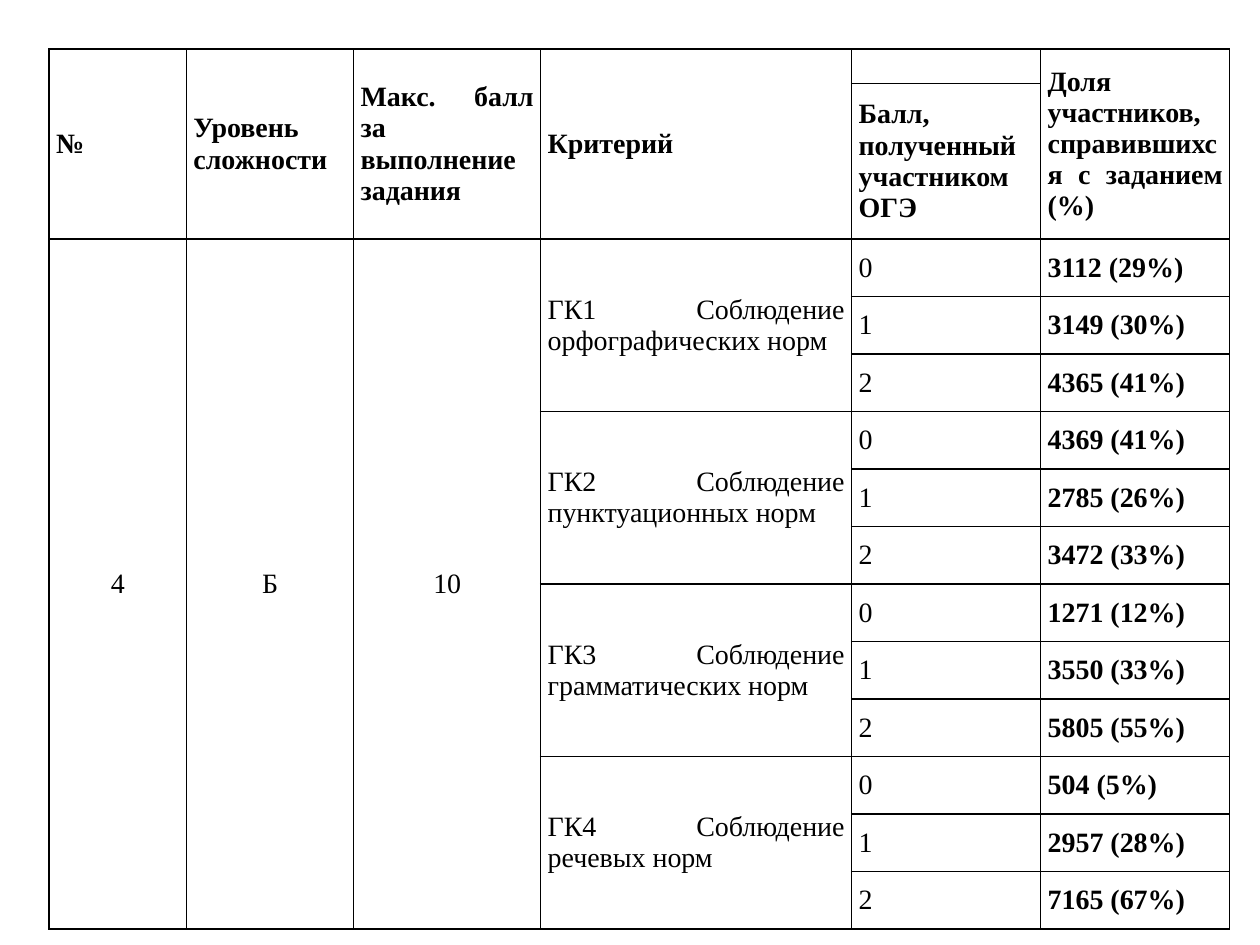
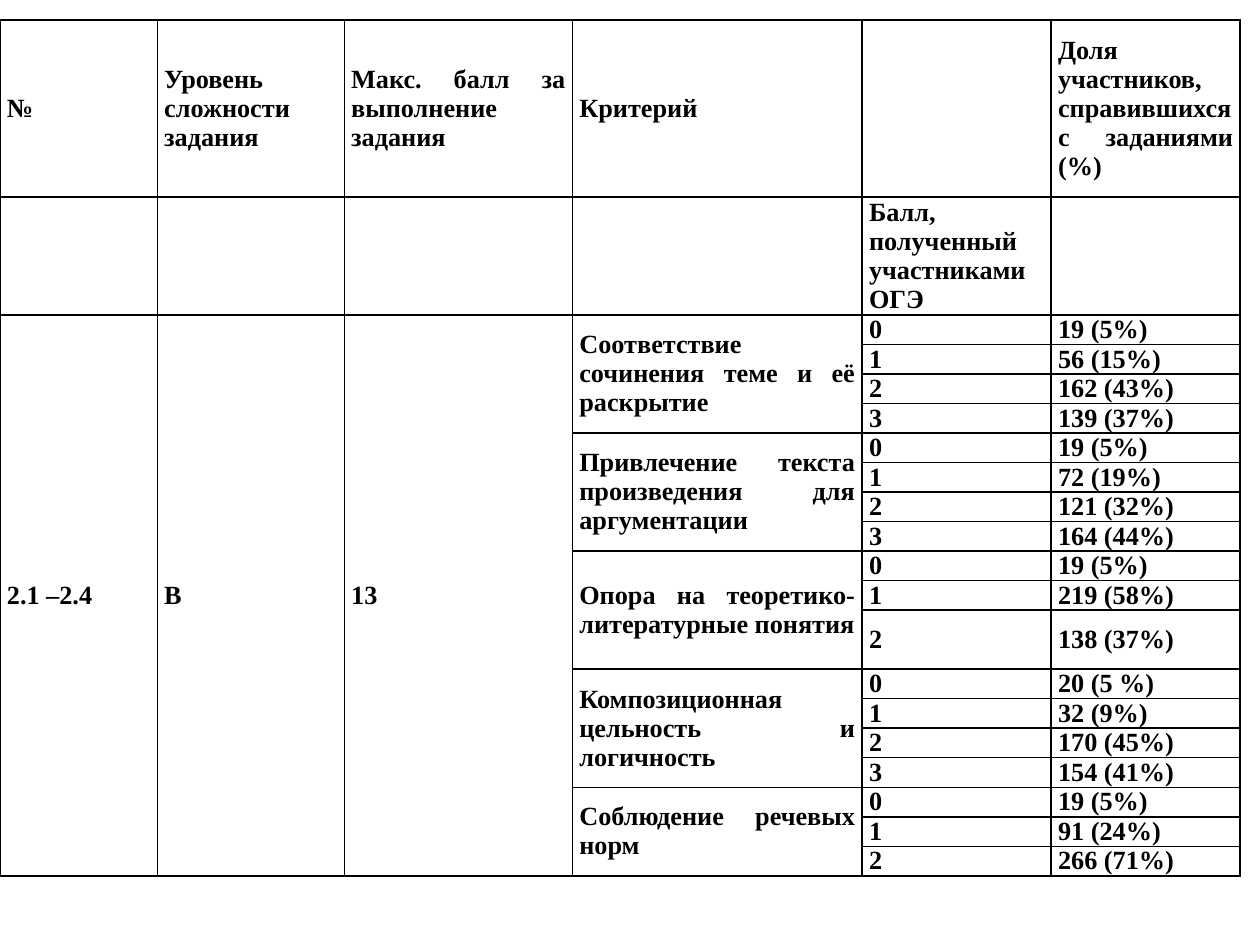
from lxml.etree import SubElement
from pptx import Presentation
from pptx.dml.color import RGBColor
from pptx.enum.text import MSO_ANCHOR, PP_ALIGN
from pptx.oxml.ns import qn
from pptx.util import Cm, Pt

BLACK = RGBColor(0, 0, 0)
FONT = "Times New Roman"
CELL_FORMAT = {
    "margin_left": Cm(0.14), "margin_right": Cm(0.14),
    "margin_top": 0, "margin_bottom": 0,
    "vertical_anchor": MSO_ANCHOR.MIDDLE,
}

# Each criterion: name, then the share of participants for scores 0, 1, 2...
RUSSIAN = {
    "headers": [
        ["№", "Уровень сложности", "Макс. балл за выполнение задания", "Критерий",
         "", "Доля участников, справившихся с заданием (%)"],
        ["", "", "", "", "Балл, полученный участником ОГЭ", ""],
    ],
    "merged_headers": (0, 1, 2, 3, 5),
    "task": ["4", "Б", "10"],
    "criteria": [
        ("ГК1 Соблюдение орфографических норм", ["3112 (29%)", "3149 (30%)", "4365 (41%)"]),
        ("ГК2 Соблюдение пунктуационных норм", ["4369 (41%)", "2785 (26%)", "3472 (33%)"]),
        ("ГК3 Соблюдение грамматических норм", ["1271 (12%)", "3550 (33%)", "5805 (55%)"]),
        ("ГК4 Соблюдение речевых норм", ["504 (5%)", "2957 (28%)", "7165 (67%)"]),
    ],
    "left": 0.99, "top": 0.99,
    "columns": [2.77, 3.37, 3.77, 6.27, 3.81, 3.81],
    "header_heights": [0.63, 3.13],
    "body_height": 13.91,
    "size": 16,
    "bold_columns": (5,),
    "task_alignment": PP_ALIGN.CENTER,
}
LITERATURE = {
    "headers": [
        ["№", "Уровень сложности задания", "Макс. балл за выполнение задания", "Критерий",
         "", "Доля участников, справившихся с заданиями (%)"],
        ["", "", "", "", "Балл, полученный участниками ОГЭ", ""],
    ],
    "merged_headers": (),
    "task": ["2.1 –2.4", "В", "13"],
    "criteria": [
        ("Соответствие сочинения теме и её раскрытие",
         ["19 (5%)", "56 (15%)", "162 (43%)", "139 (37%)"]),
        ("Привлечение текста произведения для аргументации",
         ["19 (5%)", "72 (19%)", "121 (32%)", "164 (44%)"]),
        ("Опора на теоретико-литературные понятия",
         ["19 (5%)", "219 (58%)", "138 (37%)"]),
        ("Композиционная цельность и логичность",
         ["20 (5 %)", "32 (9%)", "170 (45%)", "154 (41%)"]),
        ("Соблюдение речевых норм", ["19 (5%)", "91 (24%)", "266 (71%)"]),
    ],
    "left": 0, "top": 0.4,
    "columns": [3.17, 3.77, 4.6, 5.84, 3.81, 3.81],
    "header_heights": [3.57, 2.38],
    "body_height": 11.31,
    "double_row": 10,
    "size": 15,
    "bold_columns": range(6),
    "task_alignment": PP_ALIGN.JUSTIFY,
}


def add_borders(cell):
    properties = cell._tc.get_or_add_tcPr()
    for side in ("a:lnL", "a:lnR", "a:lnT", "a:lnB"):
        line = SubElement(properties, qn(side), w=str(Pt(1)))
        fill = SubElement(line, qn("a:solidFill"))
        SubElement(fill, qn("a:srgbClr"), val=str(BLACK))


def write_cell(cell, text, size, bold, alignment):
    paragraph = cell.text_frame.paragraphs[0]
    paragraph.alignment = alignment
    if not text:
        # Keeps an empty cell from growing to the default 18 pt line
        SubElement(paragraph._p, qn("a:endParaRPr"), sz=str(size * 100))
        return
    run = paragraph.add_run()
    run.text = text
    run.font.name, run.font.size, run.font.bold = FONT, Pt(size), bold
    run.font.color.rgb = BLACK


def body_rows(results):
    """One row per score; names stand only in the first row of their span."""
    rows = []
    for name, shares in results["criteria"]:
        for score, share in enumerate(shares):
            task = ["", "", ""] if rows else results["task"]
            rows.append([*task, "" if score else name, str(score), share])
    return rows


def merge_cells(table, results):
    header_count = len(results["headers"])
    last_row = len(table.rows) - 1
    for column in results["merged_headers"]:
        table.cell(0, column).merge(table.cell(header_count - 1, column))
    for column in range(len(results["task"])):
        table.cell(header_count, column).merge(table.cell(last_row, column))
    first = header_count
    for _, shares in results["criteria"]:
        table.cell(first, 3).merge(table.cell(first + len(shares) - 1, 3))
        first += len(shares)


def add_results_table(slide, results):
    body = body_rows(results)
    rows = results["headers"] + body
    weights = [2 if index == results.get("double_row") else 1 for index in range(len(body))]
    unit = results["body_height"] / sum(weights)
    heights = results["header_heights"] + [unit * weight for weight in weights]
    widths = results["columns"]

    frame = slide.shapes.add_table(
        len(rows), len(widths), Cm(results["left"]), Cm(results["top"]),
        Cm(sum(widths)), Cm(sum(heights)))
    table = frame.table
    table.first_row = table.horz_banding = False
    for column, width in zip(table.columns, widths):
        column.width = Cm(width)
    for row, height in zip(table.rows, heights):
        row.height = Cm(height)

    for row_index, texts in enumerate(rows):
        is_header = row_index < len(results["headers"])
        for column_index, text in enumerate(texts):
            cell = table.cell(row_index, column_index)
            for name, value in CELL_FORMAT.items():
                setattr(cell, name, value)
            add_borders(cell)
            cell.fill.background()
            is_task = not is_header and column_index < len(results["task"])
            write_cell(cell, text, results["size"],
                       is_header or column_index in results["bold_columns"],
                       results["task_alignment"] if is_task else PP_ALIGN.JUSTIFY)
    merge_cells(table, results)


def main():
    presentation = Presentation()
    presentation.slide_width, presentation.slide_height = Cm(25.4), Cm(19.05)
    blank_layout = presentation.slide_layouts[6]
    for results in (RUSSIAN, LITERATURE):
        add_results_table(presentation.slides.add_slide(blank_layout), results)
    presentation.save("out.pptx")


if __name__ == "__main__":
    main()
